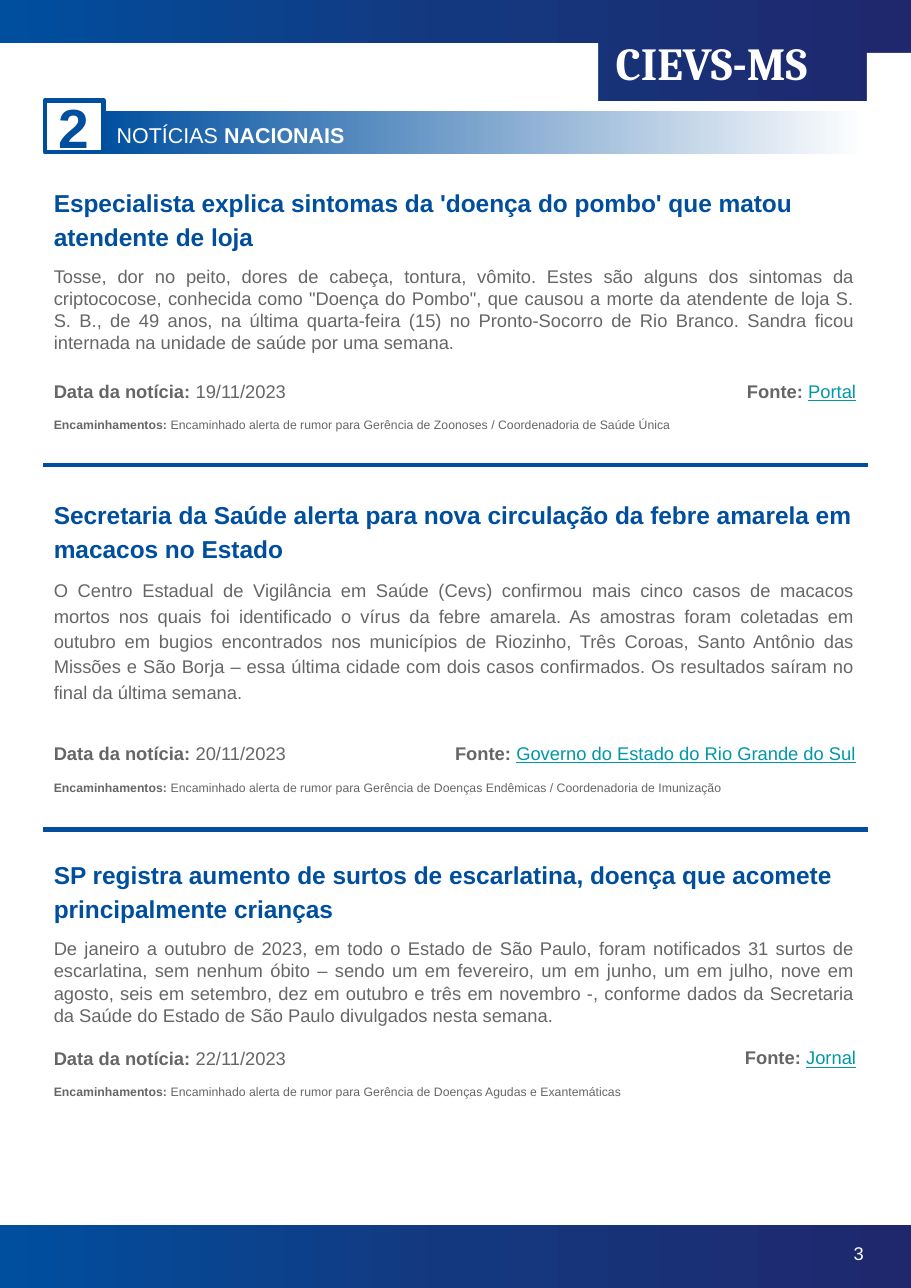
from dataclasses import dataclass

from lxml.etree import SubElement
from pptx import Presentation
from pptx.dml.color import RGBColor
from pptx.enum.shapes import MSO_CONNECTOR as Connector, MSO_SHAPE as Shape
from pptx.enum.text import MSO_ANCHOR as Anchor, PP_ALIGN as Align
from pptx.oxml.ns import qn
from pptx.util import Emu, Pt

PAGE_W, PAGE_H = 827, 1169
LEFT, COLUMN_W = 39, 747
INSET = 10


@dataclass(frozen=True)
class Theme:
    blue: str = "004F9F"
    mid_blue: str = "14387F"
    navy: str = "20286D"
    white: str = "FFFFFF"
    grey: str = "666666"
    link: str = "0097A7"
    sans: str = "Arial"
    serif: str = "Cambria"
    masthead: int = 30
    number: int = 36
    section: int = 14
    headline: int = 16
    body: int = 12
    small: int = 8
    stroke: int = 3


THEME = Theme()
BAND = (THEME.blue, THEME.mid_blue, THEME.navy)


@dataclass(frozen=True)
class Story:
    top: int
    body_top: int
    facts_top: int
    headline: str
    body: str
    date: str
    source: str
    referral: str
    body_spacing: float = 1.0


STORIES = (
    Story(157, 231, 335,
          "Especialista explica sintomas da 'doença do pombo' que matou atendente de loja",
          "Tosse, dor no peito, dores de cabeça, tontura, vômito. Estes são alguns dos "
          "sintomas da criptococose, conhecida como \"Doença do Pombo\", que causou a morte "
          "da atendente de loja S. S. B., de 49 anos, na última quarta-feira (15) no "
          "Pronto-Socorro de Rio Branco. Sandra ficou internada na unidade de saúde por "
          "uma semana.",
          "19/11/2023", "Portal",
          "Gerência de Zoonoses / Coordenadoria de Saúde Única"),
    Story(440, 513, 664,
          "Secretaria da Saúde alerta para nova circulação da febre amarela em macacos no Estado",
          "O Centro Estadual de Vigilância em Saúde (Cevs) confirmou mais cinco casos de "
          "macacos mortos nos quais foi identificado o vírus da febre amarela. As amostras "
          "foram coletadas em outubro em bugios encontrados nos municípios de Riozinho, Três "
          "Coroas, Santo Antônio das Missões e São Borja – essa última cidade com dois casos "
          "confirmados. Os resultados saíram no final da última semana.",
          "20/11/2023", "Governo do Estado do Rio Grande do Sul",
          "Gerência de Doenças Endêmicas / Coordenadoria de Imunização", 1.15),
    Story(767, 841, 940,
          "SP registra aumento de surtos de escarlatina, doença que acomete principalmente crianças",
          "De janeiro a outubro de 2023, em todo o Estado de São Paulo, foram notificados 31 "
          "surtos de escarlatina, sem nenhum óbito – sendo um em fevereiro, um em junho, um em "
          "julho, nove em agosto, seis em setembro, dez em outubro e três em novembro -, "
          "conforme dados da Secretaria da Saúde do Estado de São Paulo divulgados nesta semana.",
          "22/11/2023", "Jornal",
          "Gerência de Doenças Agudas e Exantemáticas"),
)


def px(n):
    return Emu(n * 9144)


def rgb(code):
    return RGBColor.from_string(code)


def fill_gradient(shape, colours):
    shape.fill.gradient()
    shape.fill.gradient_angle = 0
    stops = shape.element.spPr.find(qn("a:gradFill")).find(qn("a:gsLst"))
    for stop in list(stops):
        stops.remove(stop)
    for i, colour in enumerate(colours):
        stop = SubElement(stops, qn("a:gs"), pos=str(100000 * i // (len(colours) - 1)))
        SubElement(stop, qn("a:srgbClr"), val=colour)


def add_panel(slide, x, y, w, h, *colours):
    panel = slide.shapes.add_shape(Shape.RECTANGLE, px(x), px(y), px(w), px(h))
    panel.shadow.inherit = False
    panel.line.fill.background()
    if len(colours) > 1:
        fill_gradient(panel, colours)
    else:
        panel.fill.solid()
        panel.fill.fore_color.rgb = rgb(colours[0])
    return panel


def set_frame(shape, anchor=Anchor.TOP, left=INSET):
    frame = shape.text_frame
    frame.word_wrap = True
    frame.vertical_anchor = anchor
    frame.margin_left = px(left)
    frame.margin_right = frame.margin_top = frame.margin_bottom = px(INSET)
    return frame


def add_text_box(slide, x, y, w, h, anchor=Anchor.TOP):
    return set_frame(slide.shapes.add_textbox(px(x), px(y), px(w), px(h)), anchor)


def write(paragraph, runs, size, colour, align=Align.LEFT, font=THEME.sans, spacing=1.0):
    """Each run is (text, bold)."""
    paragraph.alignment = align
    paragraph.line_spacing = spacing
    paragraph.font.name = font
    paragraph.font.size = Pt(size)
    paragraph.font.color.rgb = rgb(colour)
    for text, bold in runs:
        run = paragraph.add_run()
        run.text = text
        run.font.bold = bold
    return paragraph


def add_rule(slide, y):
    rule = slide.shapes.add_connector(Connector.STRAIGHT, px(LEFT), px(y), px(788), px(y))
    rule.line.color.rgb = rgb(THEME.blue)
    rule.line.width = Pt(THEME.stroke)
    SubElement(rule.element.spPr, qn("a:effectLst"))


def add_page_frame(slide):
    # Footer and page number
    add_panel(slide, 0, 1112, PAGE_W, PAGE_H - 1112, *BAND)
    page = add_text_box(slide, 744, 1093, 50, 89, Anchor.MIDDLE)
    write(page.paragraphs[0], [("3", False)], THEME.body, THEME.white, Align.RIGHT)

    # Masthead band, cut to a tab by white panels
    add_panel(slide, 0, 21, PAGE_W, 71, *BAND)
    add_panel(slide, 0, 39, 543, 58, THEME.white)
    add_panel(slide, 0, 0, PAGE_W, 39, *BAND)
    add_panel(slide, 787, 48, 40, 49, THEME.white)
    masthead = add_text_box(slide, 549, 21, 238, 71)
    write(masthead.paragraphs[0], [("CIEVS-MS", True)], THEME.masthead, THEME.white,
          font=THEME.serif)


def add_section_heading(slide):
    bar = add_panel(slide, 91, 101, 697, 39, THEME.blue, THEME.white)
    write(set_frame(bar, left=15).paragraphs[0], [("NOTÍCIAS", False), (" NACIONAIS", True)],
          THEME.section, THEME.white)
    number = add_panel(slide, 41, 91, 53, 47, THEME.white)
    number.line.color.rgb = rgb(THEME.blue)
    number.line.width = Pt(THEME.stroke)
    write(set_frame(number, Anchor.MIDDLE).paragraphs[0], [("2", True)],
          THEME.number, THEME.blue, Align.CENTER)


def add_story(slide, story):
    headline = add_text_box(slide, LEFT, story.top, COLUMN_W, 78)
    write(headline.paragraphs[0], [(story.headline, True)], THEME.headline, THEME.blue,
          spacing=1.15)
    body = add_text_box(slide, LEFT, story.body_top, COLUMN_W, 101)
    write(body.paragraphs[0], [(story.body, False)], THEME.body, THEME.grey,
          Align.JUSTIFY, spacing=story.body_spacing)

    # Date and referral on the left, source on the right
    facts = add_text_box(slide, LEFT, story.facts_top, COLUMN_W, 68)
    write(facts.paragraphs[0], [("Data da notícia: ", True), (story.date, False)],
          THEME.body, THEME.grey, Align.JUSTIFY)
    referral = write(facts.add_paragraph(),
                     [("Encaminhamentos: ", True),
                      ("Encaminhado alerta de rumor para " + story.referral, False)],
                     THEME.small, THEME.grey, Align.JUSTIFY)
    referral.space_before = referral.space_after = Pt(10)
    credit = add_text_box(slide, 369, story.facts_top, 418, 40)
    source = write(credit.paragraphs[0], [("Fonte: ", True), (story.source, False)],
                   THEME.body, THEME.grey, Align.RIGHT).runs[1]
    source.font.color.rgb = rgb(THEME.link)
    source.font.underline = True


def main():
    deck = Presentation()
    deck.slide_width, deck.slide_height = px(PAGE_W), px(PAGE_H)
    slide = deck.slides.add_slide(deck.slide_layouts[6])
    add_page_frame(slide)
    add_section_heading(slide)
    for story in STORIES:
        add_story(slide, story)
    for y in (422, 753):
        add_rule(slide, y)
    deck.save("out.pptx")


if __name__ == "__main__":
    main()
